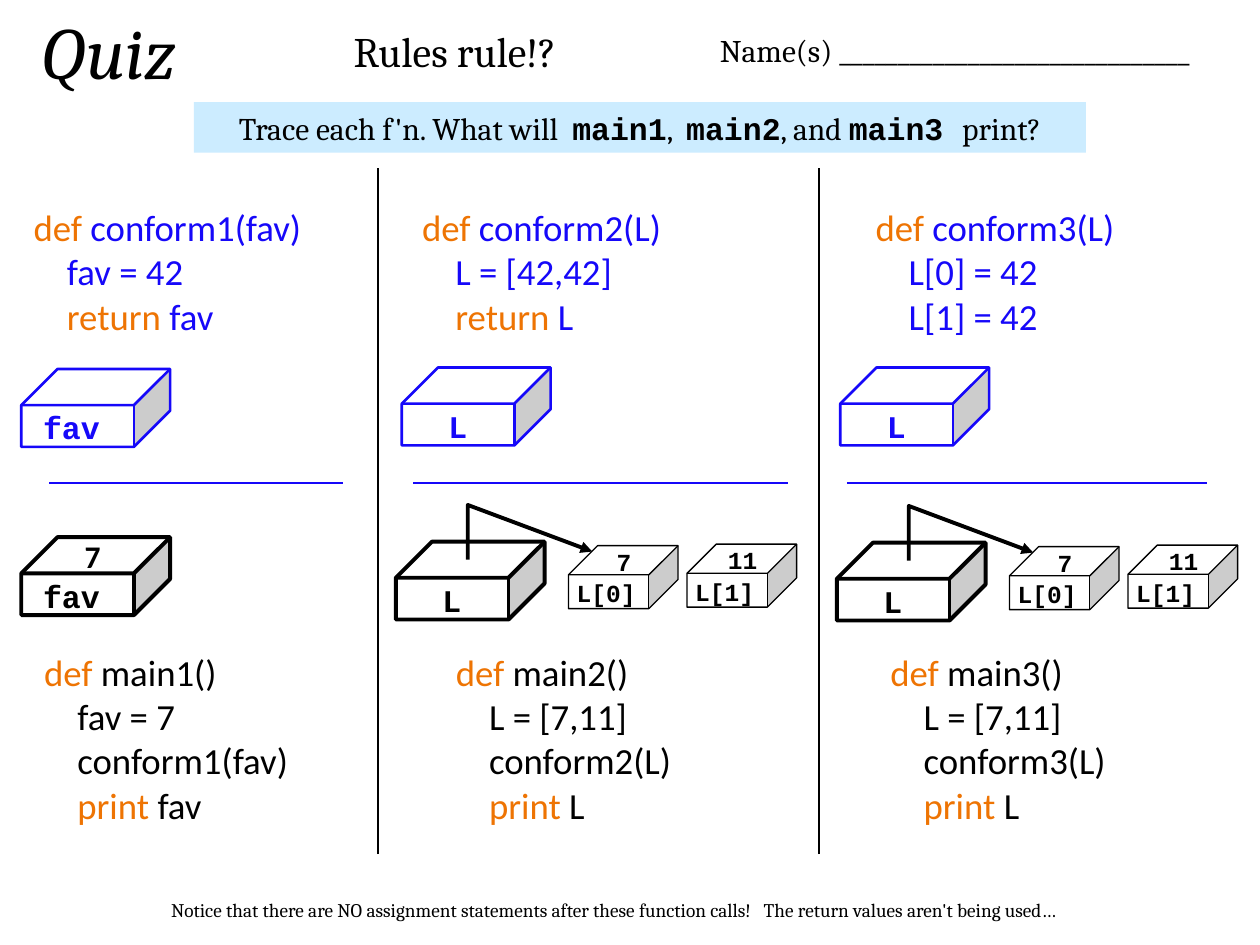
from dataclasses import dataclass

from lxml import etree
from pptx import Presentation
from pptx.dml.color import RGBColor
from pptx.enum import shapes, text
from pptx.oxml import ns
from pptx.util import Cm, Pt


@dataclass(frozen=True)
class Theme:
    """Colours, fonts and type sizes."""
    ink: str = "000000"
    paper: str = "FFFFFF"
    blue: str = "1608F9"
    orange: str = "EE7403"
    band: str = "CCECFF"
    serif: str = "Cambria"
    sans: str = "Calibri"
    mono: str = "Courier New"
    title: int = 42
    topic: int = 24
    code: int = 21
    body: int = 18
    small: int = 14
    note: int = 11


@dataclass(frozen=True)
class Trace:
    """One traced function: its code, its variable and its column offsets in cm."""
    left: float
    function: tuple
    main: tuple
    variable: str
    function_x: float
    main_x: float
    blue_box: tuple
    black_box: tuple
    rule: tuple
    label_centre: float = 1.13
    value: str = ""
    items: tuple = ()


T = Theme()
KEYWORDS = ("def", "return", "print")
TRACES = (
    Trace(0, ("def conform1(fav)", "fav = 42", "return fav"),
          ("def main1()", "fav = 7", "conform1(fav)", "print fav"), "fav",
          0.43, 0.64, (0.43, 7.44), (0.43, 10.83), (0.99, 6.91),
          label_centre=1.01, value="7"),
    Trace(7.62, ("def conform2(L)", "L = [42,42]", "return L"),
          ("def main2()", "L = [7,11]", "conform2(L)", "print L"), "L",
          0.64, 1.32, (0.48, 7.41), (0.36, 10.92), (0.71, 8.26),
          items=("7", "11")),
    Trace(16.51, ("def conform3(L)", "L[0] = 42", "L[1] = 42"),
          ("def main3()", "L = [7,11]", "conform3(L)", "print L"), "L",
          0.89, 1.19, (0.43, 7.41), (0.36, 10.94), (0.56, 7.82),
          items=("7", "11")),
)


def rgb(colour):
    """Return a hex string as a colour."""
    return RGBColor.from_string(colour)


def style(font, name, size, colour=T.ink, bold=None, italic=None):
    """Set the look of a font."""
    font.name, font.size, font.bold, font.italic = name, Pt(size), bold, italic
    font.color.rgb = rgb(colour)


def add_text(s, x, y, w, h, words, name, size, colour=T.ink, bold=None, wrap=True):
    """Add a centred line of text in a box."""
    tf = s.shapes.add_textbox(Cm(x), Cm(y), Cm(w), Cm(h)).text_frame
    tf.word_wrap = wrap
    p = tf.paragraphs[0]
    p.text, p.alignment = words, text.PP_ALIGN.CENTER
    style(p.font, name, size, colour, bold)


def add_line(s, x1, y1, x2, y2, colour, width):
    """Add a straight line without a shadow."""
    line = s.shapes.add_connector(
        shapes.MSO_CONNECTOR.STRAIGHT, Cm(x1), Cm(y1), Cm(x2), Cm(y2))
    line.line.color.rgb, line.line.width = rgb(colour), Pt(width)
    etree.SubElement(line._element.spPr, ns.qn("a:effectLst"))


def add_code(s, x, y, w, lines, colour):
    """Add code with orange keywords and an indented body."""
    tf = s.shapes.add_textbox(Cm(x), Cm(y), Cm(w), Cm(0.25 + 0.9 * len(lines))).text_frame
    tf.word_wrap = True
    for i, line in enumerate(lines):
        p = tf.paragraphs[0] if i == 0 else tf.add_paragraph()
        style(p.font, T.sans, T.code, colour)
        if i:
            p._p.get_or_add_pPr().set("marL", str(Cm(0.67)))
        first, gap, rest = line.partition(" ")
        if first in KEYWORDS:
            r = p.add_run()
            r.text = first + gap
            r.font.color.rgb = rgb(T.orange)
            line = rest
        p.add_run().text = line


def add_cube(s, x, y, w, h, colour, width):
    """Add a white cube that stands for a memory box."""
    cube = s.shapes.add_shape(shapes.MSO_SHAPE.CUBE, Cm(x), Cm(y), Cm(w), Cm(h))
    cube.adjustments[0] = 0.464
    cube.shadow.inherit = False
    cube.fill.solid()
    cube.fill.fore_color.rgb = rgb(T.paper)
    cube.line.color.rgb, cube.line.width = rgb(colour), Pt(width)


def add_variable(s, x, y, trace, colour, width, value=""):
    """Add a large cube with its variable name and value."""
    add_cube(s, x, y, 3, 1.57, colour, width)
    add_text(s, x + trace.label_centre - 0.83, y + 0.67, 1.66, 1.02,
             trace.variable, T.mono, T.body, colour, True, False)
    if value:
        add_text(s, x + 1.02, y - 0.13, 0.84, 1.02, value, T.sans, T.body,
                 bold=True, wrap=False)


def add_list(s, x, y, items):
    """Add the pointer and the item cubes relative to a variable cube."""
    points = [(Cm(x + dx), Cm(y + dy))
              for dx, dy in ((1.45, 0.36), (1.45, -0.74), (3.96, 0.2))]
    builder = s.shapes.build_freeform(*points[0])
    builder.add_line_segments(points[1:], close=False)
    arrow = builder.convert_to_shape()
    arrow.shadow.inherit = False
    arrow.fill.background()
    arrow.line.color.rgb, arrow.line.width = rgb(T.ink), Pt(2.25)
    etree.SubElement(arrow.line._get_or_add_ln(), ns.qn("a:tailEnd"), type="triangle")
    for i, item in enumerate(items):
        left, top = x + 3.48 + 2.39 * i, y + 0.08 - 0.03 * i
        add_cube(s, left, top, 2.21, 1.27, T.ink, 0.75)
        add_text(s, left - 0.36, top + 0.53, 2.24, 0.84, f"L[{i}]", T.mono, T.small, bold=True)
        add_text(s, left, top - 0.1, 2.24, 0.84, item, T.mono, T.small, bold=True)


def add_column(s, trace):
    """Add one function, its memory boxes and its caller."""
    x = trace.left
    add_code(s, x + trace.function_x, 4.01, 6.8, trace.function, T.blue)
    add_variable(s, x + trace.blue_box[0], trace.blue_box[1], trace, T.blue, 1.5)
    add_line(s, x + trace.rule[0], 9.73, x + trace.rule[1], 9.73, T.blue, 1)
    left, top = x + trace.black_box[0], trace.black_box[1]
    add_variable(s, left, top, trace, T.ink, 2.25, trace.value)
    if trace.items:
        add_list(s, left, top, trace.items)
    add_code(s, x + trace.main_x, 12.98, 6, trace.main, T.ink)
    if x:
        add_line(s, x, 17.22, x, 3.38, T.ink, 0.75)


def add_header(s):
    """Add the title, the topic and the name field."""
    title = s.shapes.title
    title.left, title.top, title.width, title.height = Cm(0), Cm(0), Cm(4.37), Cm(2.06)
    tf = title.text_frame
    tf.auto_size, tf.vertical_anchor = text.MSO_AUTO_SIZE.NONE, text.MSO_ANCHOR.TOP
    p = tf.paragraphs[0]
    p.text, p.alignment = "Quiz", text.PP_ALIGN.CENTER
    style(p.font, T.serif, T.title, italic=True)
    add_text(s, 4.09, 0.38, 10.16, 1.3, "Rules rule!?", T.serif, T.topic)
    add_text(s, 14.17, 0.51, 10.16, 1.02, "Name(s) " + "_" * 30, T.serif, T.body)


def add_question(s, x, y, w, h):
    """Add the question band with function names in monospace."""
    band = s.shapes.add_shape(shapes.MSO_SHAPE.RECTANGLE, Cm(x), Cm(y), Cm(w), Cm(h))
    band.shadow.inherit = False
    band.fill.solid()
    band.fill.fore_color.rgb = rgb(T.band)
    band.line.fill.background()
    p = band.text_frame.paragraphs[0]
    p.alignment = text.PP_ALIGN.CENTER
    parts = ("Trace each f'n. What will  ", "main1", ",  ", "main2", ", and ", "main3 ", "print?")
    for part in parts:
        r = p.add_run()
        r.text = part
        mono = part.startswith("main")
        style(r.font, T.mono if mono else T.serif, T.body, bold=mono)


def main():
    """Build the quiz slide."""
    prs = Presentation()
    prs.slide_width, prs.slide_height = Cm(25.4), Cm(19.05)
    s = prs.slides.add_slide(prs.slide_layouts[5])
    add_header(s)
    add_question(s, 3.91, 2.06, 17.98, 1.02)
    for trace in TRACES:
        add_column(s, trace)
    add_text(s, 1.96, 17.98, 20.85, 0.74,
             "Notice that there are NO assignment statements after these function calls!   "
             "The return values aren't being used…", T.serif, T.note)
    prs.save("out.pptx")


if __name__ == "__main__":
    main()
